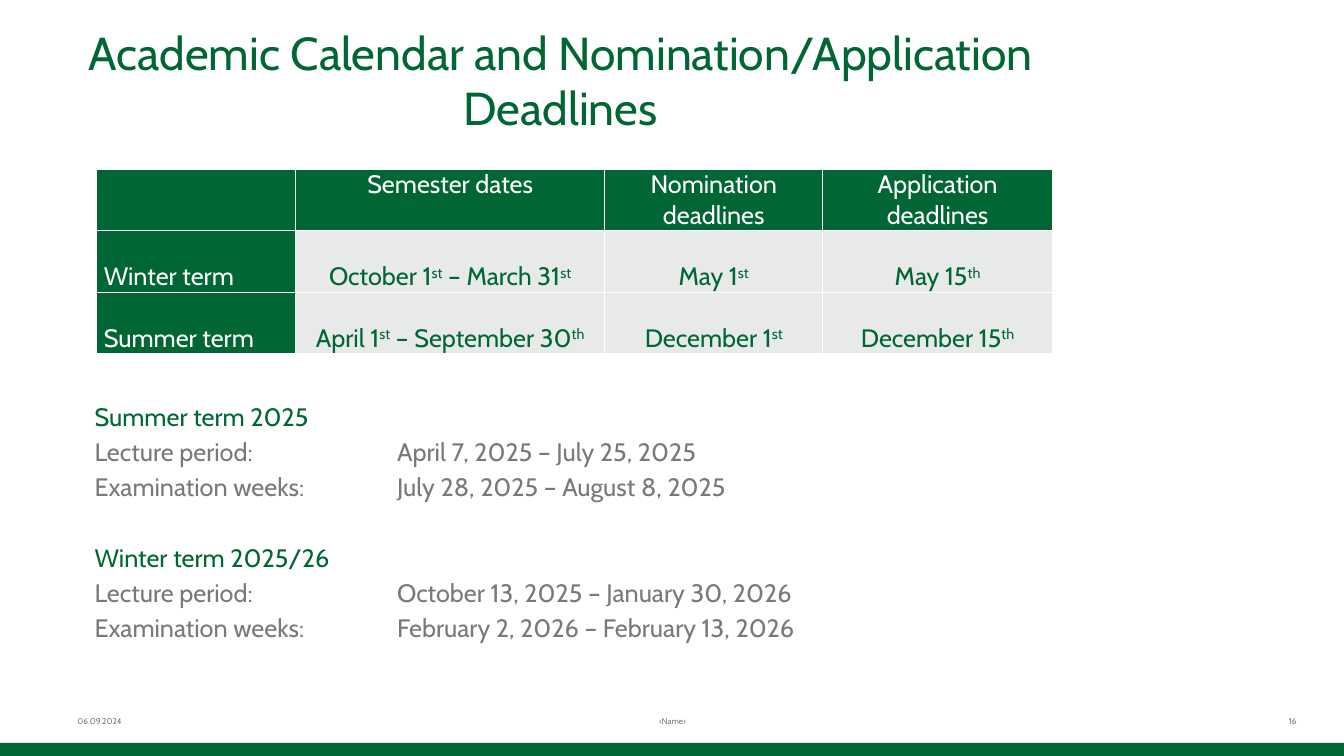
from dataclasses import dataclass

from lxml.etree import SubElement
from pptx import Presentation
from pptx.dml.color import RGBColor
from pptx.enum.shapes import MSO_SHAPE
from pptx.enum.text import MSO_ANCHOR, MSO_AUTO_SIZE, PP_ALIGN
from pptx.oxml.ns import qn
from pptx.slide import Slide
from pptx.table import _Cell
from pptx.text.text import TextFrame, _Paragraph
from pptx.util import Inches, Pt

FONT = "Cabin"
COLOURS = {"green": "006633", "grey": "797979", "pale": "E7EAE8", "white": "FFFFFF"}
COLUMN_WIDTHS = [1.97, 3.07, 2.16, 2.28]
ROW_HEIGHT = 0.61
BORDER_SIDES = ["a:lnL", "a:lnR", "a:lnT", "a:lnB"]
TERM_DATES = [
    ["", "Semester dates", "Nomination deadlines", "Application deadlines"],
    ["Winter term", "October 1|st| – March 31|st", "May 1|st", "May 15|th"],
    ["Summer term", "April 1|st| – September 30|th", "December 1|st", "December 15|th"],
]


@dataclass
class Term:
    name: str
    lectures: str
    exams: str


@dataclass
class FooterItem:
    text: str
    left: float
    width: float
    align: PP_ALIGN
    right_inset: float = 0.1


TERMS = [
    Term("Summer term 2025", "April 7, 2025 – July 25, 2025", "July 28, 2025 – August 8, 2025"),
    Term("Winter term 2025/26", "October 13, 2025 – January 30, 2026", "February 2, 2026 – February 13, 2026"),
]
FOOTER = [
    FooterItem("06.09.2024", 0.67, 3.11, PP_ALIGN.LEFT),
    FooterItem("‹Name›", 4.56, 4.22, PP_ALIGN.CENTER),
    FooterItem("16", 9.75, 3.11, PP_ALIGN.RIGHT, 0),
]


def colour(name: str) -> RGBColor:
    return RGBColor.from_string(COLOURS[name])


def set_insets(frame: TextFrame | _Cell, left: float, top: float, right: float, bottom: float) -> None:
    frame.margin_left, frame.margin_top = Inches(left), Inches(top)
    frame.margin_right, frame.margin_bottom = Inches(right), Inches(bottom)


def add_span(para: _Paragraph, text: str, size: float, ink: str, raised: bool = False) -> None:
    span = para.add_run()
    span.text = text
    span.font.name = FONT
    span.font.size = Pt(size)
    span.font.color.rgb = colour(ink)
    if raised:
        span.font._element.set("baseline", "30000")


def add_title(page: Slide, text: str) -> None:
    title = page.shapes.title
    title.left, title.top = Inches(0.69), Inches(0.24)
    title.width, title.height = Inches(9.74), Inches(1.25)
    frame = title.text_frame
    frame.auto_size = MSO_AUTO_SIZE.NONE
    frame.word_wrap = True
    frame.vertical_anchor = MSO_ANCHOR.TOP
    set_insets(frame, 0.1, 0, 0.1, 0.05)
    para = frame.paragraphs[0]
    para.alignment = PP_ALIGN.CENTER
    add_span(para, text, 33, "green")


def add_borders(cell: _Cell) -> None:
    properties = cell._tc.get_or_add_tcPr()
    for position, side in enumerate(BORDER_SIDES):
        line = properties.makeelement(qn(side), {"w": str(Pt(1))})
        fill = SubElement(line, qn("a:solidFill"))
        SubElement(fill, qn("a:srgbClr"), val=COLOURS["white"])
        properties.insert(position, line)


def fill_cell(cell: _Cell, text: str, is_header: bool, is_label: bool) -> None:
    is_dark = is_header or is_label
    cell.fill.solid()
    cell.fill.fore_color.rgb = colour("green" if is_dark else "pale")
    add_borders(cell)
    set_insets(cell, 0.07, 0, 0.07, 0)
    cell.vertical_anchor = MSO_ANCHOR.TOP if is_header else MSO_ANCHOR.BOTTOM
    para = cell.text_frame.paragraphs[0]
    para.font.size = Pt(18)
    para.alignment = PP_ALIGN.LEFT if is_label else PP_ALIGN.CENTER
    for index, part in enumerate(text.split("|")):
        if part:
            add_span(para, part, 18, "white" if is_dark else "green", index % 2 == 1)


def add_deadline_table(page: Slide) -> None:
    rows, columns = len(TERM_DATES), len(COLUMN_WIDTHS)
    table = page.shapes.add_table(
        rows, columns, Inches(0.96), Inches(1.68),
        Inches(sum(COLUMN_WIDTHS)), Inches(rows * ROW_HEIGHT),
    ).table
    for column, width in zip(table.columns, COLUMN_WIDTHS):
        column.width = Inches(width)
    for row_index, texts in enumerate(TERM_DATES):
        table.rows[row_index].height = Inches(ROW_HEIGHT)
        for column_index, text in enumerate(texts):
            fill_cell(table.cell(row_index, column_index), text, row_index == 0, column_index == 0)


def add_term_periods(page: Slide) -> None:
    frame = page.shapes.add_textbox(Inches(0.84), Inches(3.93), Inches(12.19), Inches(3.01)).text_frame
    frame.word_wrap = True
    for term_index, term in enumerate(TERMS):
        lines = [
            (term.name, "green"),
            (f"Lecture period:\t{term.lectures}", "grey"),
            (f"Examination weeks:\t{term.exams}", "grey"),
        ]
        for line_index, (text, ink) in enumerate(lines):
            is_first = term_index == line_index == 0
            para = frame.paragraphs[0] if is_first else frame.add_paragraph()
            if line_index:
                para.space_before = Pt(3.6)
                tabs = SubElement(para._p.get_or_add_pPr(), qn("a:tabLst"))
                SubElement(tabs, qn("a:tab"), pos=str(Inches(3)), algn="l")
            elif term_index:
                para.space_before = Pt(28.8)
            add_span(para, text, 18, ink)


def add_footer_item(page: Slide, item: FooterItem) -> None:
    box = page.shapes.add_textbox(Inches(item.left), Inches(6.95), Inches(item.width), Inches(0.4))
    frame = box.text_frame
    frame.word_wrap = True
    frame.vertical_anchor = MSO_ANCHOR.MIDDLE
    set_insets(frame, 0.1, 0.05, item.right_inset, 0.05)
    para = frame.paragraphs[0]
    para.alignment = item.align
    add_span(para, item.text, 6, "grey")


def add_bottom_bar(page: Slide) -> None:
    bar = page.shapes.add_shape(MSO_SHAPE.RECTANGLE, 0, Inches(7.37), Inches(13.33), Inches(0.13))
    bar.shadow.inherit = False
    bar.fill.solid()
    bar.fill.fore_color.rgb = colour("green")
    bar.line.fill.background()


def main() -> None:
    deck = Presentation()
    deck.slide_width, deck.slide_height = Inches(13.33), Inches(7.5)
    page = deck.slides.add_slide(deck.slide_layouts.get_by_name("Title Only"))
    add_bottom_bar(page)
    add_title(page, "Academic Calendar and Nomination/Application Deadlines")
    for item in FOOTER:
        add_footer_item(page, item)
    add_term_periods(page)
    add_deadline_table(page)
    deck.save("out.pptx")


if __name__ == "__main__":
    main()
